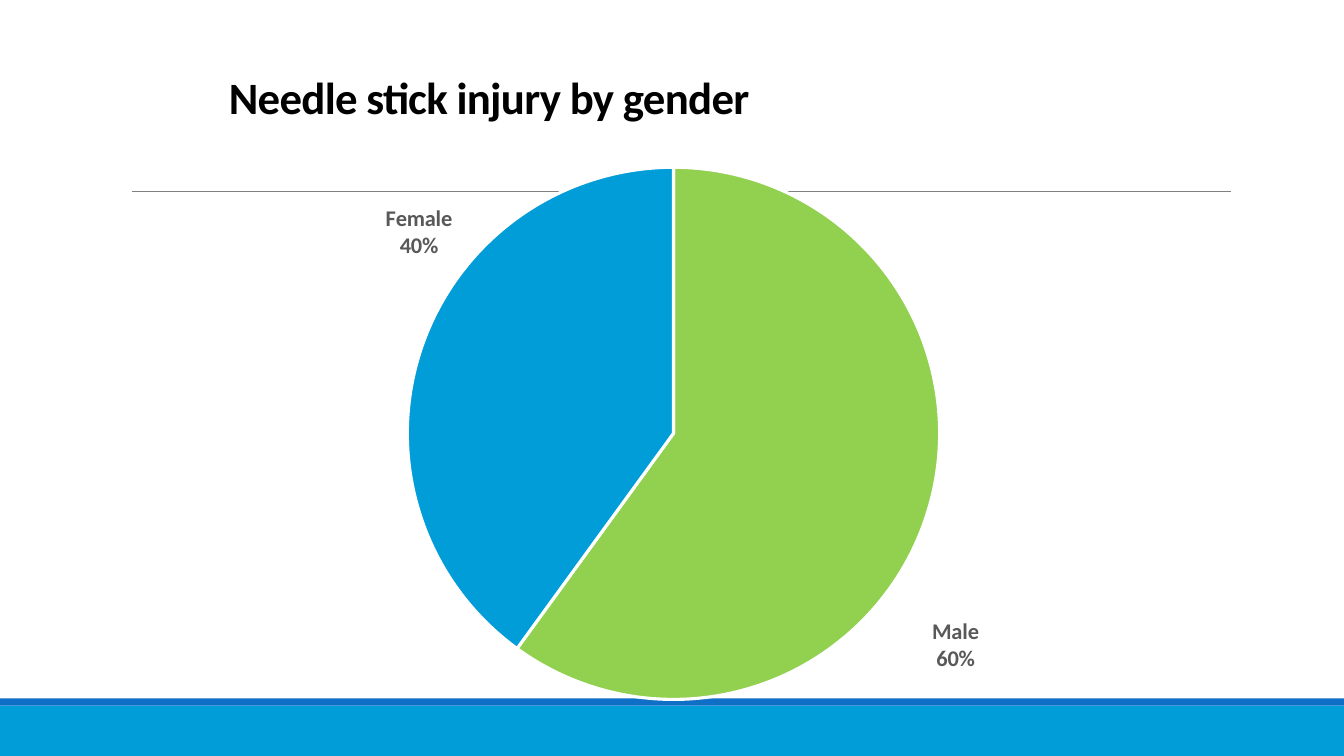
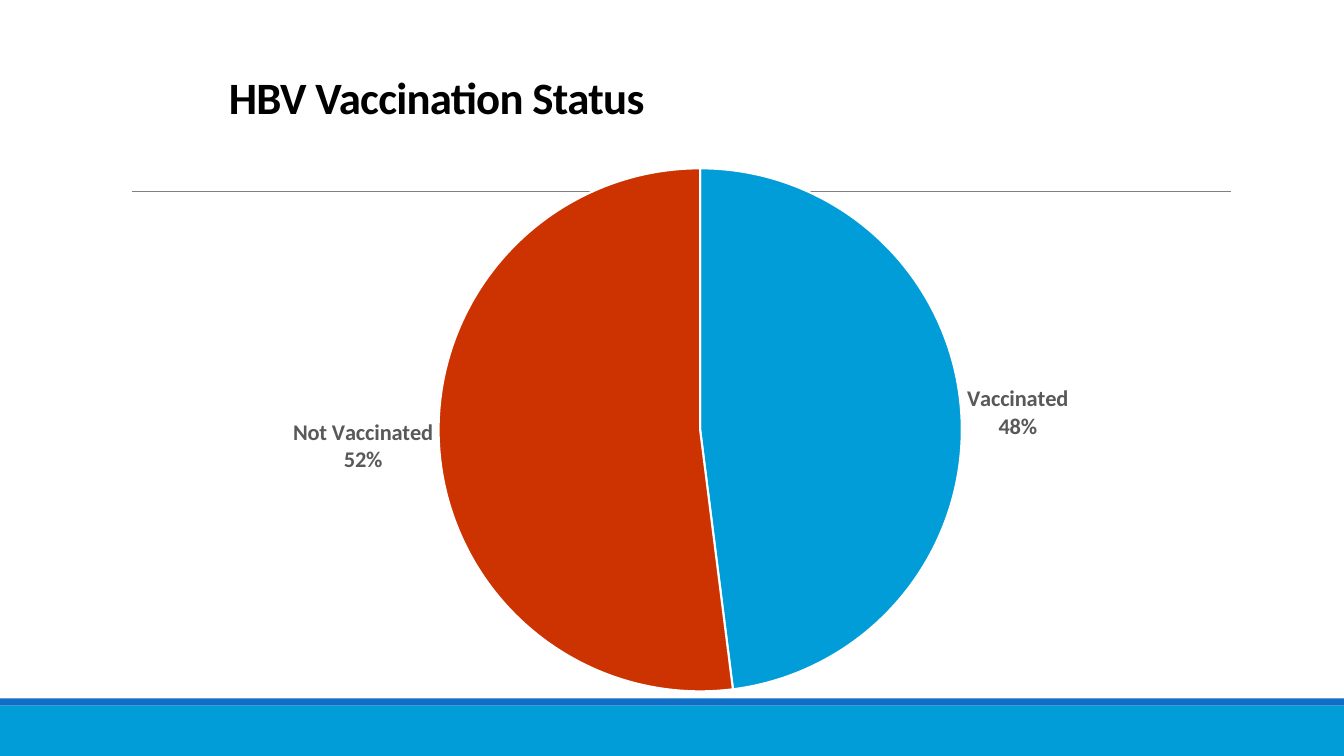
"""Build two slides with pie charts on needle stick injuries and vaccination."""
from copy import deepcopy

from lxml.etree import SubElement
from pptx import Presentation
from pptx.chart.data import CategoryChartData
from pptx.dml.color import RGBColor
from pptx.enum.chart import XL_CHART_TYPE, XL_LABEL_POSITION
from pptx.enum.shapes import MSO_CONNECTOR, MSO_SHAPE
from pptx.enum.text import MSO_ANCHOR, PP_ALIGN
from pptx.oxml import parse_xml
from pptx.oxml.ns import nsdecls, qn
from pptx.util import Inches, Pt

FONT = "Calibri"
WHITE = RGBColor(0xFF, 0xFF, 0xFF)
BLACK = RGBColor(0, 0, 0)
GRAY = RGBColor(0x80, 0x80, 0x80)
LABEL_GRAY = RGBColor(0x59, 0x59, 0x59)
SKY = RGBColor(0x00, 0x9D, 0xD9)
BLUE = RGBColor(0x0F, 0x6F, 0xC6)
GREEN = RGBColor(0x92, 0xD0, 0x50)
RED = RGBColor(0xCC, 0x33, 0x00)

BANDS = [(7, 0.5, SKY), (6.93, 0.07, BLUE)]
RULE = (1.31, 12.21, 1.9)
TITLE_BOX = (2.17, 0.25, 9, 1.5)

SLIDES = [
    {
        "title": "Needle stick injury by gender",
        "slices": [("Male", 60, GREEN), ("Female", 40, SKY)],
        "box": (1.92, 1.53, 9.33, 5.56),
        "pie": (4.04, 1.66, 5.28),
        "edge": 2.25,
        "label_shifts": [(0, 0.18), (0.04, -0.16)],
    },
    {
        "title": "HBV Vaccination Status",
        "slices": [("Vaccinated", 48, SKY), ("Not Vaccinated", 52, RED)],
        "box": (2.08, 1.53, 9.33, 5.47),
        "pie": (4.35, 1.67, 5.19),
        "edge": 1.5,
        "label_shifts": [],
    },
]


def manual_layout(**settings):
    """Return a chart layout element with the given settings."""
    layout = parse_xml(f"<c:layout {nsdecls('c')}><c:manualLayout/></c:layout>")
    for tag, value in settings.items():
        SubElement(layout[0], qn(f"c:{tag}")).set("val", str(value))
    return layout


def decorate_layout(layout, slide):
    """Draw the bands and the rule and move them behind the layout's placeholders."""
    decorations = []
    for top, height, color in BANDS:
        band = slide.shapes.add_shape(
            MSO_SHAPE.RECTANGLE, 0, Inches(top), Inches(13.33), Inches(height))
        band.shadow.inherit = False
        band.fill.solid()
        band.fill.fore_color.rgb = color
        band.line.fill.background()
        decorations.append(band)
    left, right, y = RULE
    rule = slide.shapes.add_connector(
        MSO_CONNECTOR.STRAIGHT, Inches(left), Inches(y), Inches(right), Inches(y))
    rule.line.color.rgb = GRAY
    rule.line.width = Pt(0.5)
    SubElement(rule.element.spPr, qn("a:effectLst"))
    decorations.append(rule)
    for index, decoration in enumerate(decorations):
        decoration.element.xpath(".//p:cNvPr")[0].set("id", str(50 + index))
        layout.shapes.element.insert(2 + index, decoration.element)


def set_title(slide, text):
    """Place and format the slide title."""
    title = slide.shapes.title
    title.left, title.top, title.width, title.height = map(Inches, TITLE_BOX)
    frame = title.text_frame
    frame.text = text
    frame.vertical_anchor = MSO_ANCHOR.MIDDLE
    paragraph = frame.paragraphs[0]
    paragraph.alignment = PP_ALIGN.LEFT
    paragraph.line_spacing = 0.85
    run = paragraph.runs[0]
    run.font.name, run.font.size, run.font.bold = FONT, Pt(32), True
    run.font.color.rgb = BLACK
    run.font._element.set("spc", "-50")


def label_slices(plot, shifts):
    """Show category and percentage outside each slice, shifted where asked."""
    plot.has_data_labels = True
    labels = plot.data_labels
    labels.show_value = False
    labels.show_category_name = labels.show_percentage = True
    labels.number_format, labels.number_format_is_linked = "0%", False
    labels.position = XL_LABEL_POSITION.OUTSIDE_END
    labels.font.name, labels.font.size, labels.font.bold = FONT, Pt(16), True
    labels.font.color.rgb = LABEL_GRAY
    group = labels._element
    separator = parse_xml(f"<c:separator {nsdecls('c')}>\n</c:separator>")
    group.find(qn("c:showPercent")).getnext().addnext(separator)
    for leader_lines in group.findall(qn("c:showLeaderLines")):
        group.remove(leader_lines)
    shared = [deepcopy(part) for part in group]
    SubElement(group, qn("c:showLeaderLines")).set("val", "0")
    for index, (dx, dy) in enumerate(shifts):
        label = parse_xml(f'<c:dLbl {nsdecls("c")}><c:idx val="{index}"/></c:dLbl>')
        label.append(manual_layout(x=dx, y=dy))
        label.extend(deepcopy(shared))
        group.insert(index, label)
    plot.series[0]._element.find(qn("c:cat")).addprevious(group)


def add_pie(slide, content):
    """Add the pie chart of one slide."""
    names, values, colors = zip(*content["slices"])
    data = CategoryChartData()
    data.categories = names
    data.add_series("Series 1", values)
    chart = slide.shapes.add_chart(
        XL_CHART_TYPE.PIE, *map(Inches, content["box"]), data).chart
    chart.has_title = chart.has_legend = False
    chart.font.name, chart.font.size = FONT, Pt(10)
    chart.font.color.rgb = BLACK
    space = chart._chartSpace
    space.find(qn("c:txPr")).addprevious(parse_xml(
        f"<c:spPr {nsdecls('c', 'a')}><a:noFill/><a:ln><a:noFill/></a:ln></c:spPr>"))

    plot = chart.plots[0]
    plot.vary_by_categories = True
    for index, color in enumerate(colors):
        style = plot.series[0].points[index].format
        style.fill.solid()
        style.fill.fore_color.rgb = color
        style.line.color.rgb = WHITE
        style.line.width = Pt(content["edge"])
    label_slices(plot, content["label_shifts"])

    left, top, width, height = content["box"]
    pie_left, pie_top, diameter = content["pie"]
    area = space.chart.plotArea
    for old in area.findall(qn("c:layout")):
        area.remove(old)
    area.insert(0, manual_layout(
        layoutTarget="inner", xMode="edge", yMode="edge",
        x=(pie_left - left) / width, y=(pie_top - top) / height,
        w=diameter / width, h=diameter / height))


def main():
    """Build and save the presentation."""
    deck = Presentation()
    deck.slide_width, deck.slide_height = Inches(13.33), Inches(7.5)
    title_only = deck.slide_layouts[5]
    for number, content in enumerate(SLIDES):
        slide = deck.slides.add_slide(title_only)
        if number == 0:
            decorate_layout(title_only, slide)
        set_title(slide, content["title"])
        add_pie(slide, content)
    deck.save("out.pptx")


if __name__ == "__main__":
    main()
